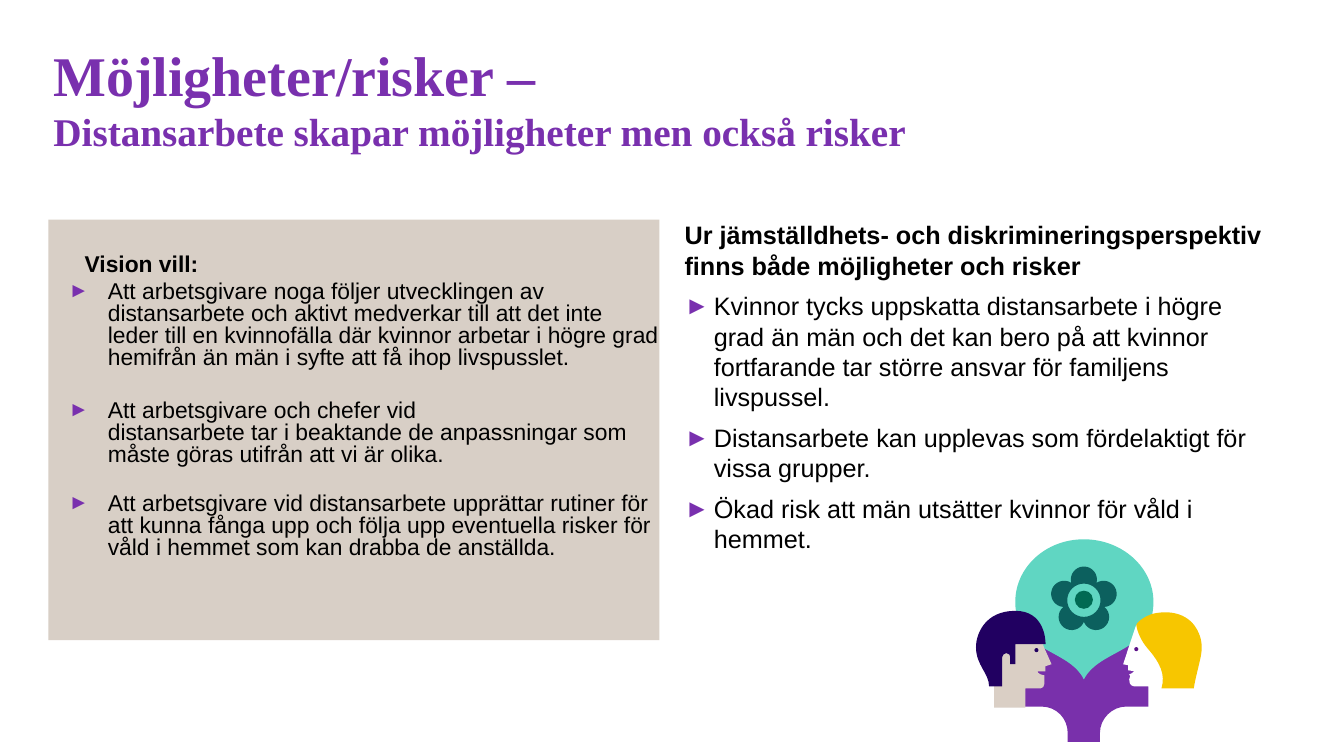
import math
from lxml import etree
from pptx import Presentation, util as u
from pptx.dml.color import RGBColor
from pptx.enum import shapes, text
from pptx.oxml import ns

PX = 9144
PURPLE = "7930AE"


def paint(shape, color):
    shape.fill.solid()
    shape.fill.fore_color.rgb = RGBColor.from_string(color)
    shape.line.fill.background()
    shape.shadow.inherit = False


def write(frame, lines, size, spacing, margin, hang, bullet_size):
    for i, (line, bold, before) in enumerate(lines):
        p = frame.paragraphs[0] if i == 0 else frame.add_paragraph()
        p.text = line
        p.alignment = text.PP_ALIGN.LEFT
        p.line_spacing = spacing
        p.space_before = u.Pt(before)
        if not bold:
            props = p._p.get_or_add_pPr()
            props.set("marL", str(margin * PX))
            props.set("indent", str(-hang * PX))
            color = etree.SubElement(props, ns.qn("a:buClr"))
            etree.SubElement(color, ns.qn("a:srgbClr"), val=PURPLE)
            etree.SubElement(props, ns.qn("a:buSzPct"), val=str(bullet_size * 1000))
            etree.SubElement(props, ns.qn("a:buFont"), typeface="Arial")
            etree.SubElement(props, ns.qn("a:buChar"), char="►")
        p.font.name = "Arial"
        p.font.size = u.Pt(size)
        p.font.bold = bold
        p.font.color.rgb = RGBColor.from_string("000000")


deck = Presentation()
deck.slide_width, deck.slide_height = 1333 * PX, 750 * PX
slide = deck.slides.add_slide(deck.slide_layouts[6])

heading = slide.shapes.add_textbox(53 * PX, 40 * PX, 1217 * PX, 142 * PX).text_frame
perspective = slide.shapes.add_textbox(679 * PX, 218 * PX, 590 * PX, 417 * PX).text_frame
vision_box = slide.shapes.add_shape(
    shapes.MSO_SHAPE.RECTANGLE, 48 * PX, 218 * PX, 606 * PX, 417 * PX)
paint(vision_box, "D8CFC6")
vision = vision_box.text_frame

for frame, top in ((heading, 0), (perspective, 0), (vision, 35)):
    frame.word_wrap = True
    frame.vertical_anchor = text.MSO_ANCHOR.TOP
    frame.margin_left = frame.margin_right = frame.margin_bottom = 0
    frame.margin_top = top * PX

title = heading.paragraphs[0]
title.font.name = "Times New Roman"
title.font.bold = True
title.font.color.rgb = RGBColor.from_string(PURPLE)
topic = title.add_run()
topic.text = "Möjligheter/risker –"
topic.font.size = u.Pt(40)
title.add_line_break()
claim = title.add_run()
claim.text = "Distansarbete skapar möjligheter men också risker"
claim.font.size = u.Pt(28)

write(perspective, [
    ("Ur jämställdhets- och diskrimineringsperspektiv finns både möjligheter och risker", True, 0),
    ("Kvinnor tycks uppskatta distansarbete i högre grad än män och det kan bero på att kvinnor fortfarande tar större ansvar för familjens livspussel.", False, 7.5),
    ("Distansarbete kan upplevas som fördelaktigt för vissa grupper.", False, 7.5),
    ("Ökad risk att män utsätter kvinnor för våld i hemmet.", False, 7.5),
], 18, 1.0, 29, 29, 100)

write(vision, [
    ("Vision vill:", True, 0),
    ("Att arbetsgivare noga följer utvecklingen av distansarbete och aktivt medverkar till att det inte leder till en kvinnofälla där kvinnor arbetar i högre grad hemifrån än män i syfte att få ihop livspusslet.", False, 3.8),
    ("Att arbetsgivare och chefer vid\ndistansarbete tar i beaktande de anpassningar som måste göras utifrån att vi är olika.", False, 22.6),
    ("Att arbetsgivare vid distansarbete upprättar rutiner för att kunna fånga upp och följa upp eventuella risker för våld i hemmet som kan drabba de anställda.", False, 19.4),
], 16.3, 0.8, 59, 39, 90)
vision.paragraphs[0]._p.get_or_add_pPr().set("marL", str(36 * PX))

shoulders = [
    (1164, 628), (1164, 619, 1157, 612, 1148, 612), (1003, 612),
    (994, 612, 987, 619, 987, 628), (987, 685), (987, 694, 994, 701, 1003, 701),
    (1033, 701), (1048, 701, 1059, 713, 1059, 727), (1059, 736), (1091, 736),
    (1091, 727), (1091, 713, 1103, 701, 1117, 701), (1148, 701),
    (1157, 701, 1164, 694, 1164, 685)]
bubble = [
    (1075, 535), (1037, 535, 1007, 563, 1007, 597), (1007, 648, 1060, 643, 1075, 674),
    (1091, 643, 1144, 648, 1144, 597), (1144, 563, 1113, 535, 1075, 535)]
right_face = [
    (1125, 666), (1125, 666, 1119, 665, 1119, 665), (1119, 660), (1114, 659),
    (1114, 659, 1126, 622, 1127, 620), (1131, 620, 1143, 615, 1147, 616),
    (1165, 623, 1183, 645, 1178, 656), (1177, 660, 1168, 676, 1168, 676),
    (1168, 704), (1139, 704), (1139, 681), (1126, 681),
    (1123, 681, 1120, 680, 1120, 674), (1121, 671), (1120, 669),
    (1120, 669, 1124, 668, 1125, 666)]
left_face = [
    (992, 648), (1002, 648), (1002, 659), (1007, 659), (1007, 639), (1035, 639),
    (1035, 640, 1035, 641, 1035, 641), (1043, 659), (1037, 661), (1037, 666),
    (1029, 666), (1029, 666, 1029, 669, 1036, 670), (1036, 671), (1036, 678),
    (1036, 681, 1034, 683, 1032, 683), (1017, 683), (1017, 702), (986, 702),
    (986, 676), (991, 676)]
left_hair = [
    (1007, 606), (1035, 606, 1037, 633, 1037, 639), (1007, 639), (1007, 659),
    (1002, 659), (1002, 652), (1002, 650, 1001, 648, 998, 648),
    (996, 648, 994, 650, 994, 652), (994, 681), (981, 681),
    (981, 668, 968, 660, 968, 642), (968, 629, 977, 606, 1007, 606)]
right_hair = [
    (1185, 621), (1174, 606, 1155, 606, 1143, 609), (1134, 612, 1127, 618, 1127, 620),
    (1128, 627, 1132, 636, 1138, 643), (1151, 658, 1156, 669, 1152, 683),
    (1184, 683), (1186, 671, 1189, 661, 1191, 651), (1193, 641, 1192, 631, 1185, 621)]

arcs = [(1075 + 20.5 * math.cos(math.radians(a)), 595.5 + 20.5 * math.sin(math.radians(a)),
         13, a - 104, 104, 2) for a in range(-90, 270, 72)]
arcs.append((1075, 595.5, 16.5, 0, -90, 4))
flower, eye = [], []
for x, y, radius, start, sweep, count in arcs:
    contour = flower if sweep > 0 else eye
    pull = 4 / 3 * math.tan(math.radians(sweep) / 4)
    for k in range(count):
        a, b = (math.radians(start + sweep * n) for n in (k, k + 1))
        from_x, from_y = x + radius * math.cos(a), y + radius * math.sin(a)
        to_x, to_y = x + radius * math.cos(b), y + radius * math.sin(b)
        if not contour:
            contour.append((from_x, from_y))
        contour.append((from_x - pull * (from_y - y), from_y + pull * (from_x - x),
                        to_x + pull * (to_y - y), to_y - pull * (to_x - x), to_x, to_y))

dots = {"5C1188": (1125, 642, 4), "210061": (1026, 643, 4), "006A53": (1066, 586, 18)}
for contours, color, dot in (
        ([shoulders], "7930AB", None), ([bubble], "60D6C2", None),
        ([right_face], "FFFFFF", "5C1188"), ([left_face], "DACFC5", None),
        ([left_hair], "210061", "210061"), ([right_hair], "F7C600", "006A53"),
        ([flower, eye], "0C605E", None)):
    builder = slide.shapes.build_freeform(
        contours[0][0][0] * PX, contours[0][0][1] * PX, scale=1.0)
    for i, contour in enumerate(contours):
        if i:
            builder.move_to(contour[0][0] * PX, contour[0][1] * PX)
        builder.add_line_segments(
            [(step[-2] * PX, step[-1] * PX) for step in contour[1:]], close=False)
    part = builder.convert_to_shape()
    outline = part._element.find(".//" + ns.qn("a:path"))
    segments = outline.findall(ns.qn("a:lnTo"))
    steps = [step for contour in contours for step in contour[1:]]
    for segment, step in zip(segments, steps):
        if len(step) == 6:
            curve = etree.Element(ns.qn("a:cubicBezTo"))
            for x, y in zip(step[::2], step[1::2]):
                etree.SubElement(curve, ns.qn("a:pt"), x=str(round(x * PX - part.left)),
                                 y=str(round(y * PX - part.top)))
            outline.replace(segment, curve)
    for start in outline.findall(ns.qn("a:moveTo"))[1:]:
        start.addprevious(etree.Element(ns.qn("a:close")))
    etree.SubElement(outline, ns.qn("a:close"))
    paint(part, color)
    if dot:
        x, y, size = dots[dot]
        paint(slide.shapes.add_shape(
            shapes.MSO_SHAPE.OVAL, x * PX, y * PX, size * PX, size * PX), dot)

deck.save("out.pptx")
